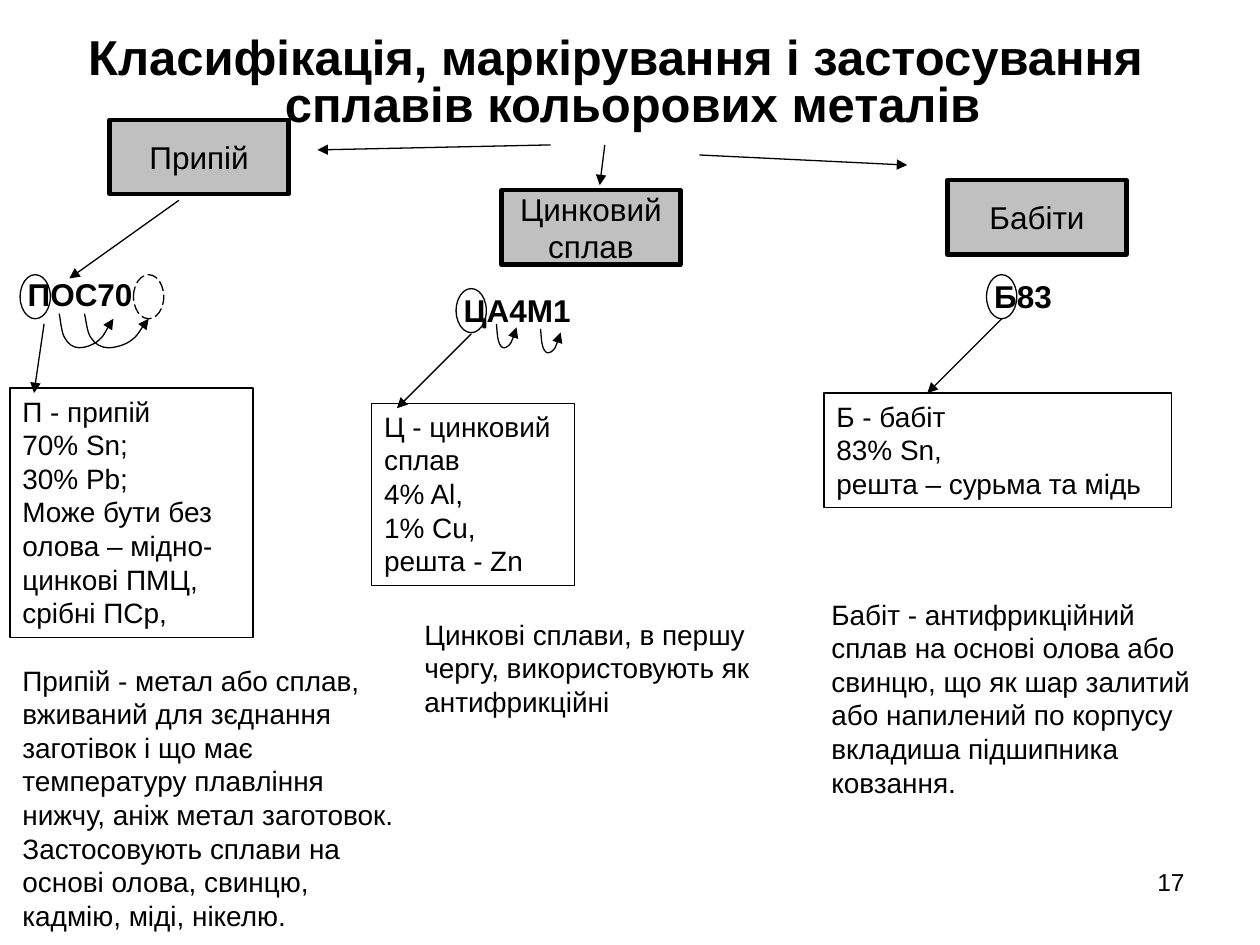
from lxml import etree
from pptx import Presentation
from pptx import util as u
from pptx.dml.color import RGBColor
from pptx.enum import dml, shapes, text
from pptx.oxml import ns

BLACK = RGBColor(0x00, 0x00, 0x00)
GRAY = RGBColor(0xC0, 0xC0, 0xC0)
FONT = "Arial"

HOOK = [
    [(0.02, 0.11), (0.04, 0.56), (0.1, 0.7)],
    [(0.16, 0.89), (0.26, 1), (0.37, 1)],
    [(0.47, 1), (0.63, 0.93), (0.73, 0.78)],
    [(0.82, 0.67), (0.94, 0.26), (1, 0.15)],
]


def box(*lengths):
    return [u.Inches(n) for n in lengths]


def write(tf, lines, size, bold=False, align=text.PP_ALIGN.LEFT):
    tf.text = "\n".join(lines)
    for p in tf.paragraphs:
        p.alignment = align
        p.font.name = FONT
        p.font.size = u.Pt(size)
        p.font.bold = bold
        p.font.color.rgb = BLACK


def hang(p, spacing):
    p.line_spacing = spacing
    p.space_before = u.Pt(0.2 * p.font.size.pt)
    pr = p._p.get_or_add_pPr()
    pr.set("marL", str(u.Inches(0.38)))
    pr.set("indent", str(-u.Inches(0.38)))


def outline(sp, width=0.75):
    sp.line.color.rgb = BLACK
    sp.line.width = u.Pt(width)


def add_arrowhead(sp):
    ln = sp.line._get_or_add_ln()
    etree.SubElement(ln, ns.qn("a:tailEnd"), type="triangle")


def add_title(s, words):
    sp = s.shapes.title
    sp.left, sp.top, sp.width, sp.height = box(0.12, 0.25, 9.53, 0.9)
    tf = sp.text_frame
    tf.word_wrap = True
    tf.auto_size = text.MSO_AUTO_SIZE.NONE
    tf.vertical_anchor = text.MSO_ANCHOR.TOP
    write(tf, [words], 28, True, text.PP_ALIGN.CENTER)
    hang(tf.paragraphs[0], 0.8)


def add_outlined(s, kind, at, width=0.75):
    sp = s.shapes.add_shape(kind, *box(*at))
    sp.shadow.inherit = False
    sp.fill.background()
    outline(sp, width)
    return sp


def add_alloy(s, left, top, lines):
    sp = add_outlined(s, shapes.MSO_SHAPE.RECTANGLE, (left, top, 1.42, 0.59), 2.5)
    sp.fill.solid()
    sp.fill.fore_color.rgb = GRAY
    tf = sp.text_frame
    tf.word_wrap = False
    tf.vertical_anchor = text.MSO_ANCHOR.MIDDLE
    write(tf, lines, 18, align=text.PP_ALIGN.CENTER)


def add_decoding(s, at, lines):
    sp = add_outlined(s, shapes.MSO_SHAPE.RECTANGLE, at)
    tf = sp.text_frame
    tf.word_wrap = True
    tf.auto_size = text.MSO_AUTO_SIZE.SHAPE_TO_FIT_TEXT
    tf.vertical_anchor = text.MSO_ANCHOR.TOP
    write(tf, lines, 16)


def add_text(s, at, words, size, bold=False, align=text.PP_ALIGN.LEFT):
    tf = s.shapes.add_textbox(*box(*at)).text_frame
    tf.word_wrap = True
    write(tf, [words], size, bold, align)
    return tf


def add_mark(s, left, top, width, words):
    tf = add_text(s, (left, top, width, 0.28), words, 18, True)
    tf.margin_left = tf.margin_right = u.Inches(0.02)
    tf.margin_top = tf.margin_bottom = u.Inches(0.01)
    hang(tf.paragraphs[0], 0.9)


def add_note(s, at, words):
    tf = add_text(s, at, words, 16)
    tf.auto_size = text.MSO_AUTO_SIZE.SHAPE_TO_FIT_TEXT
    tf.vertical_anchor = text.MSO_ANCHOR.MIDDLE


def add_ring(s, left, top, dash=None):
    sp = add_outlined(s, shapes.MSO_SHAPE.OVAL, (left, top, 0.24, 0.35))
    if dash:
        sp.line.dash_style = dash


def add_arrow(s, *ends):
    sp = s.shapes.add_connector(shapes.MSO_CONNECTOR.STRAIGHT, *box(*ends))
    outline(sp)
    add_arrowhead(sp)
    etree.SubElement(sp._element.spPr, ns.qn("a:effectLst"))


def add_hook(s, left, top, width, height):
    def place(point):
        return box(left + point[0] * width, top + point[1] * height)

    start = place((0, 0))
    builder = s.shapes.build_freeform(*start)
    builder.add_line_segments([place(curve[-1]) for curve in HOOK], close=False)
    sp = builder.convert_to_shape()
    sp.shadow.inherit = False
    sp.fill.background()
    outline(sp)
    add_arrowhead(sp)
    segments = list(sp._element.iter(ns.qn("a:lnTo")))
    for segment, curve in zip(segments, HOOK):
        bezier = etree.Element(ns.qn("a:cubicBezTo"))
        for point in curve:
            x, y = place(point)
            etree.SubElement(bezier, ns.qn("a:pt"),
                             x=str(x - start[0]), y=str(y - start[1]))
        segment.getparent().replace(segment, bezier)


def main():
    prs = Presentation()
    prs.slide_width, prs.slide_height = box(10, 7.5)
    s = prs.slides.add_slide(prs.slide_layouts[5])
    add_title(s, "Класифікація, маркірування і застосування сплавів кольорових металів ")

    add_alloy(s, 0.87, 0.95, ["Припій"])
    add_alloy(s, 3.98, 1.51, ["Цинковий", "сплав"])
    add_alloy(s, 7.52, 1.43, ["Бабіти"])

    add_mark(s, 0.2, 2.21, 2.13, "ПОС70")
    add_mark(s, 3.66, 2.33, 1.5, "ЦА4М1")
    add_mark(s, 7.87, 2.22, 0.51, "Б83")

    for left, top in [(0.16, 2.18), (3.62, 2.29), (7.83, 2.18)]:
        add_ring(s, left, top)
    add_ring(s, 1.06, 2.18, dml.MSO_LINE.LONG_DASH)

    add_decoding(s, (0.08, 3.08, 1.93, 1.98), [
        "П - припій", "70% Sn;", "30% Рb;",
        "Може бути без олова – мідно-цинкові ПМЦ, срібні ПСр,"])
    add_decoding(s, (2.95, 3.2, 1.61, 1.45), [
        "Ц - цинковий сплав", "4% Al,", "1% Cu,", "решта - Zn"])
    add_decoding(s, (6.54, 3.12, 2.76, 0.91), [
        "Б - бабіт", "83% Sn,", "решта – сурьма та мідь"])

    add_note(s, (0.08, 5.21, 3.23, 2.24),
             "Припій - метал або сплав, вживаний для зєднання заготівок і що має "
             "температуру плавління нижчу, аніж метал заготовок. Застосовують "
             "сплави на основі олова, свинцю, кадмію, міді, нікелю.")
    add_note(s, (3.27, 4.85, 2.84, 0.9),
             "Цинкові сплави, в першу чергу, використовують як антифрикційні")
    add_note(s, (6.5, 4.69, 3.19, 1.7),
             "Бабіт - антифрикційний сплав на основі олова або свинцю, що як шар "
             "залитий або напилений по корпусу вкладиша підшипника ковзання.")

    for ends in [
        (4.37, 1.15, 2.52, 1.19), (4.8, 1.15, 4.76, 1.47), (5.55, 1.23, 7.2, 1.31),
        (1.42, 1.59, 0.55, 2.21), (0.35, 2.57, 0.27, 3.12),
        (3.74, 2.65, 3.15, 3.24), (7.95, 2.53, 7.36, 3.12),
    ]:
        add_arrow(s, *ends)

    for at in [(0.47, 2.49, 0.43, 0.27), (0.67, 2.49, 0.51, 0.27),
               (3.94, 2.57, 0.16, 0.19), (4.29, 2.61, 0.16, 0.19)]:
        add_hook(s, *at)

    add_text(s, (7.17, 6.83, 2.33, 0.52), "17", 14, align=text.PP_ALIGN.RIGHT)
    prs.save("out.pptx")


if __name__ == "__main__":
    main()
